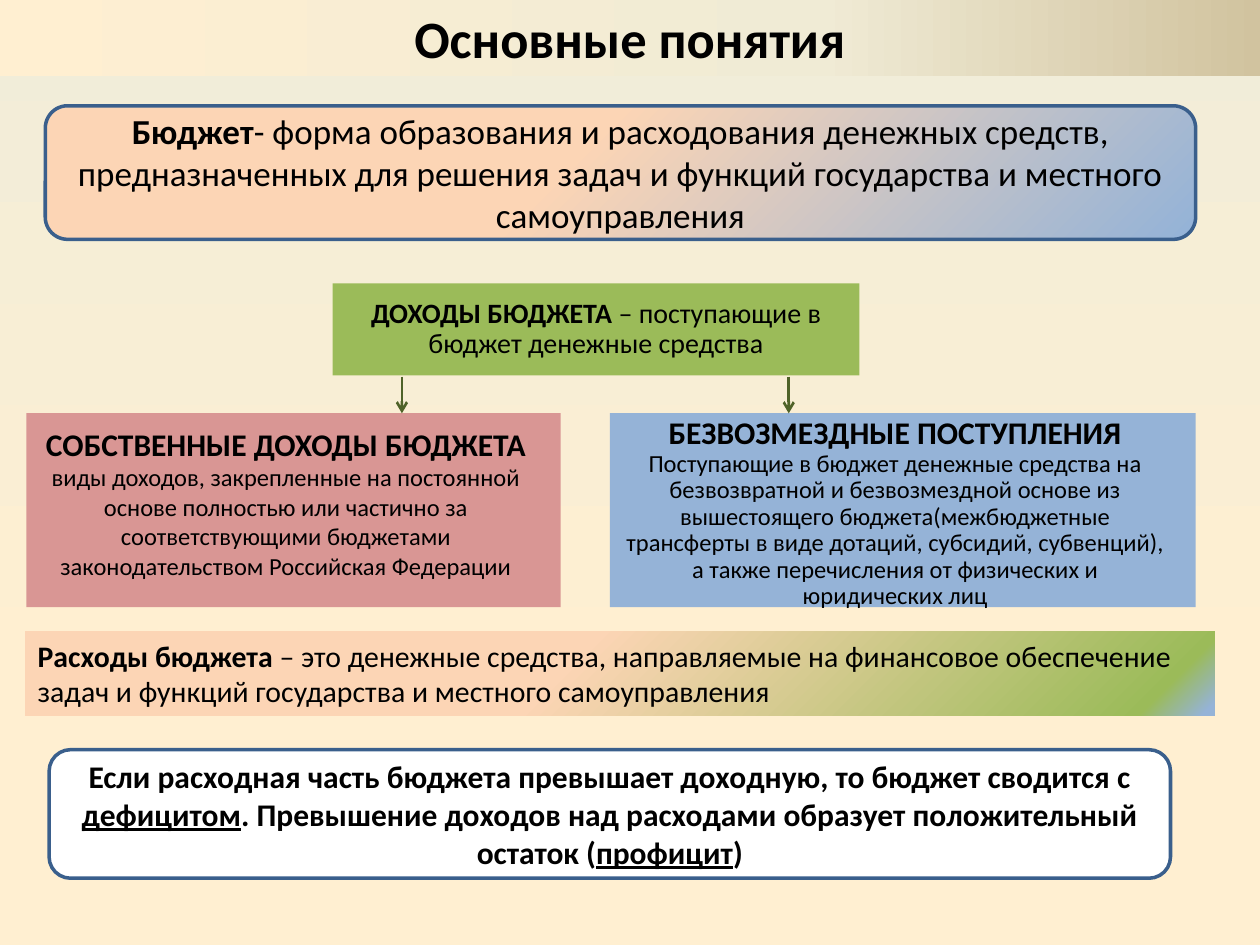
from lxml import etree
from pptx import Presentation
from pptx.dml.color import RGBColor
from pptx.enum.shapes import MSO_CONNECTOR, MSO_SHAPE
from pptx.enum.text import MSO_ANCHOR, MSO_AUTO_SIZE, PP_ALIGN
from pptx.oxml.ns import qn
from pptx.util import Inches, Pt

RECT, ROUND = MSO_SHAPE.RECTANGLE, MSO_SHAPE.ROUNDED_RECTANGLE
TOP, MID = MSO_ANCHOR.TOP, MSO_ANCHOR.MIDDLE
LEFT, MIDDLE = PP_ALIGN.LEFT, PP_ALIGN.CENTER
COLORS = {
    "cream": "FFEFD1", "pale": "F1EDD9", "ivory": "F0EBD5", "sand": "D1C39F",
    "peach": "FCD5B5", "blue": "95B3D7", "green": "9BBB59", "rose": "D99694",
    "white": "FFFFFF", "black": "000000", "edge": "3A5F8C", "arrow": "4F6228",
}


def paint(fill, root, look):
    if isinstance(look, str):
        fill.solid()
        fill.fore_color.rgb = RGBColor.from_string(COLORS[look])
        return
    angle, stops = look
    fill.gradient()
    grad = next(root.iter(qn("a:gradFill")))
    grad.find(qn("a:lin")).set("ang", str(angle * 60000))
    group = grad.find(qn("a:gsLst"))
    for old in list(group):
        group.remove(old)
    for pos, name in stops:
        stop = etree.SubElement(group, qn("a:gs"), pos=str(pos * 1000))
        etree.SubElement(stop, qn("a:srgbClr"), val=COLORS[name])


def write(shape, paras, align=MIDDLE, anchor=MID, pads=(0.1, 0.05, 0.1, 0.05), space=1.0):
    frame = shape.text_frame
    sides = ("margin_left", "margin_top", "margin_right", "margin_bottom")
    form = {side: Inches(pad) for side, pad in zip(sides, pads)}
    form |= {"word_wrap": True, "auto_size": MSO_AUTO_SIZE.NONE, "vertical_anchor": anchor}
    for key, val in form.items():
        setattr(frame, key, val)
    for num, (size, runs) in enumerate(paras):
        para = frame.add_paragraph() if num else frame.paragraphs[0]
        para.alignment = align
        para.line_spacing = space
        for text, style in runs:
            run = para.add_run()
            run.text = text
            font = {"name": "Calibri", "size": Pt(size), "bold": "b" in style,
                    "underline": "u" in style}
            for key, val in font.items():
                setattr(run.font, key, val)
            run.font.color.rgb = RGBColor.from_string(COLORS["black"])


prs = Presentation()
prs.slide_width, prs.slide_height = Inches(10), Inches(7.5)
slide = prs.slides.add_slide(prs.slide_layouts[5])
paint(slide.background.fill, slide.element, (270, [(25, "cream"), (100, "pale")]))

title = slide.shapes.title
spot = {"left": 0, "top": -0.01, "width": 10, "height": 0.61}
for key, val in spot.items():
    setattr(title, key, Inches(val))
paint(title.fill, title.element, (0, [(0, "cream"), (65, "ivory"), (100, "sand")]))
write(title, [(30, [("Основные понятия", "b")])])

budget = [(20, [
    ("Бюджет", "b"),
    ("- форма образования и расходования денежных средств, предназначенных для решения "
     "задач и функций государства и местного самоуправления", ""),
])]
income = [(16, [
    ("ДОХОДЫ БЮДЖЕТА ", "b"),
    ("– поступающие в бюджет денежные средства", ""),
])]
spend = [(17, [
    ("Расходы бюджета ", "b"),
    ("– это денежные средства, направляемые на финансовое обеспечение задач и функций "
     "государства и местного самоуправления", ""),
])]
own = [
    (18, [("СОБСТВЕННЫЕ ДОХОДЫ БЮДЖЕТА", "b")]),
    (14, [("виды доходов, закрепленные на постоянной основе полностью или частично за "
           "соответствующими бюджетами законодательством Российская Федерации", "")]),
]
grants = [
    (18, [("БЕЗВОЗМЕЗДНЫЕ ПОСТУПЛЕНИЯ", "b")]),
    (14, [("Поступающие в бюджет денежные средства на безвозвратной и безвозмездной основе "
           "из вышестоящего бюджета(межбюджетные трансферты в виде дотаций, субсидий, "
           "субвенций), а также перечисления от физических и юридических лиц", "")]),
]
result = [(18, [
    ("Если расходная часть бюджета превышает доходную, то бюджет сводится с ", "b"),
    ("дефицитом", "bu"),
    (". Превышение доходов над расходами образует положительный остаток (", "b"),
    ("профицит", "bu"),
    (")", "b"),
])]

dusk = (45, [(0, "peach"), (45, "peach"), (99, "blue"), (100, "green")])
field = (45, [(0, "peach"), (45, "peach"), (94, "green"), (99, "blue")])
boxes = [
    (ROUND, (0.36, 0.84, 9.13, 1.06), dusk, budget, {}),
    (RECT, (2.64, 2.25, 4.18, 0.73), "green", income, {"pads": (0.05,) * 4, "space": 0.9}),
    (RECT, (0.2, 5.01, 9.44, 0.67), field, spend, {"align": LEFT, "anchor": TOP}),
    (RECT, (0.21, 3.28, 4.24, 1.54), "rose", own,
     {"anchor": TOP, "pads": (0.12, 0.09, 0.24, 0.02)}),
    (RECT, (4.84, 3.28, 4.65, 1.54), "blue", grants,
     {"anchor": TOP, "pads": (0.12, 0.03, 0.24, 0.02), "space": 0.9}),
    (ROUND, (0.39, 5.95, 8.9, 1.02), "white", result, {}),
]
for kind, place, look, paras, form in boxes:
    box = slide.shapes.add_shape(kind, *map(Inches, place))
    box.shadow.inherit = False
    paint(box.fill, box.element, look)
    if kind == ROUND:
        box.line.color.rgb = RGBColor.from_string(COLORS["edge"])
        box.line.width = Pt(2)
    else:
        box.line.fill.background()
    write(box, paras, **form)

for x in (3.19, 6.26):
    ends = map(Inches, (x, 2.99, x, 3.28))
    arrow = slide.shapes.add_connector(MSO_CONNECTOR.STRAIGHT, *ends)
    arrow.line.color.rgb = RGBColor.from_string(COLORS["arrow"])
    arrow.line.width = Pt(1.5)
    props = arrow.element.spPr
    etree.SubElement(props.find(qn("a:ln")), qn("a:tailEnd"), type="arrow")
    etree.SubElement(props, qn("a:effectLst"))

prs.save("out.pptx")
